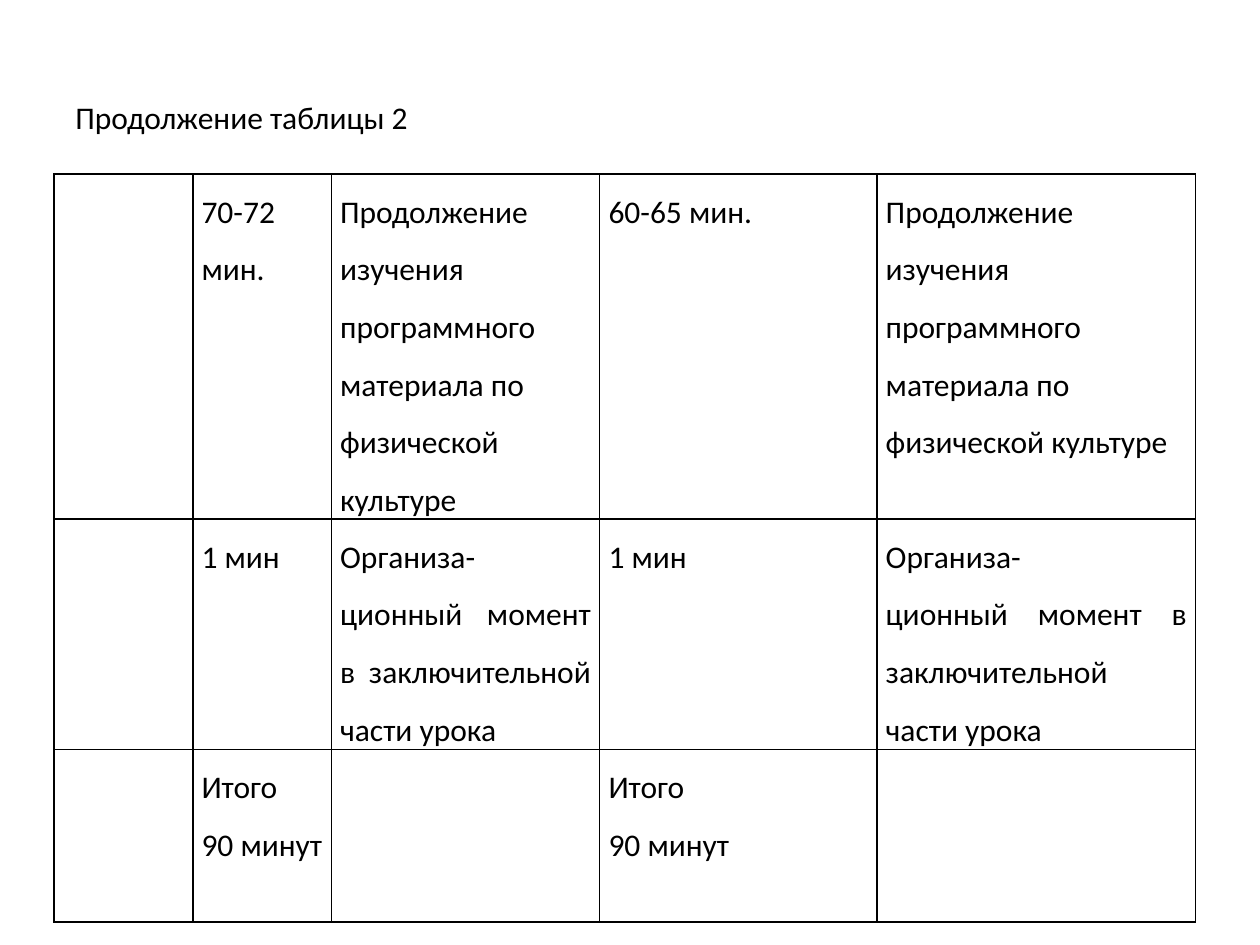
from dataclasses import dataclass

import pptx
import pptx.dml.color
import pptx.enum.text
import pptx.oxml
import pptx.oxml.ns
import pptx.util
from pptx.util import Inches

BLACK = pptx.dml.color.RGBColor(0x00, 0x00, 0x00)
FONT = "Calibri"
FONT_SIZE = pptx.util.Pt(18)
BORDER_WIDTH = pptx.util.Pt(1)
LEFT = pptx.enum.text.PP_ALIGN.LEFT
JUSTIFY = pptx.enum.text.PP_ALIGN.JUSTIFY

COLUMN_WIDTHS = (1.1, 1.1, 2.13, 2.2, 2.53)
ROW_HEIGHTS = (2.74, 1.83, 1.37)


@dataclass(frozen=True)
class Entry:
    lines: tuple[str, ...] = ()
    align: pptx.enum.text.PP_ALIGN = JUSTIFY


EMPTY = Entry()
STUDY = Entry(("Продолжение изучения программного материала по физической культуре",), LEFT)
CLOSING = Entry(("Организа-", "ционный момент в заключительной части урока"))
TOTAL = Entry(("Итого", "90 минут"))
ONE_MINUTE = Entry(("1 мин",))

LESSON_ROWS = (
    (EMPTY, Entry(("70-72 мин.",)), STUDY, Entry(("60-65 мин.",)), STUDY),
    (EMPTY, ONE_MINUTE, CLOSING, ONE_MINUTE, CLOSING),
    (EMPTY, TOTAL, EMPTY, TOTAL, EMPTY),
)


def add_run(paragraph, text: str) -> None:
    run = paragraph.add_run()
    run.text = text
    run.font.name = FONT
    run.font.size = FONT_SIZE
    run.font.color.rgb = BLACK


def add_borders(cell) -> None:
    properties = cell._tc.get_or_add_tcPr()
    for position, side in enumerate(("lnL", "lnR", "lnT", "lnB")):
        border = pptx.oxml.parse_xml(
            f'<a:{side} {pptx.oxml.ns.nsdecls("a")} w="{BORDER_WIDTH}">'
            f'<a:solidFill><a:srgbClr val="{BLACK}"/></a:solidFill></a:{side}>'
        )
        properties.insert(position, border)


def fill_cell(cell, entry: Entry) -> None:
    cell.fill.background()
    add_borders(cell)
    if not entry.lines:
        return
    cell.margin_left = cell.margin_right = Inches(0.07)
    cell.margin_top = cell.margin_bottom = Inches(0)
    for index, line in enumerate(entry.lines):
        frame = cell.text_frame
        paragraph = frame.add_paragraph() if index else frame.paragraphs[0]
        paragraph.alignment = entry.align
        paragraph.line_spacing = 1.5
        add_run(paragraph, line)


def add_heading(slide, text: str) -> None:
    heading = slide.shapes.add_textbox(Inches(0.5), Inches(0.3), Inches(9), Inches(1.25))
    frame = heading.text_frame
    frame.word_wrap = True
    frame.vertical_anchor = pptx.enum.text.MSO_ANCHOR.MIDDLE
    add_run(frame.paragraphs[0], text)


def add_lesson_table(slide) -> None:
    lesson_table = slide.shapes.add_table(
        len(ROW_HEIGHTS), len(COLUMN_WIDTHS), Inches(0.43), Inches(1.38),
        Inches(sum(COLUMN_WIDTHS)), Inches(sum(ROW_HEIGHTS)),
    ).table
    lesson_table.first_row = False
    lesson_table.horz_banding = False
    for column, width in zip(lesson_table.columns, COLUMN_WIDTHS):
        column.width = Inches(width)
    for row, height, entries in zip(lesson_table.rows, ROW_HEIGHTS, LESSON_ROWS):
        row.height = Inches(height)
        for cell, entry in zip(row.cells, entries):
            fill_cell(cell, entry)


def main() -> None:
    deck = pptx.Presentation()
    deck.slide_width, deck.slide_height = Inches(10), Inches(7.5)
    slide = deck.slides.add_slide(deck.slide_layouts[6])

    # Heading above the table
    add_heading(slide, "Продолжение таблицы 2")

    # Lesson timing table
    add_lesson_table(slide)

    deck.save("out.pptx")


if __name__ == "__main__":
    main()
